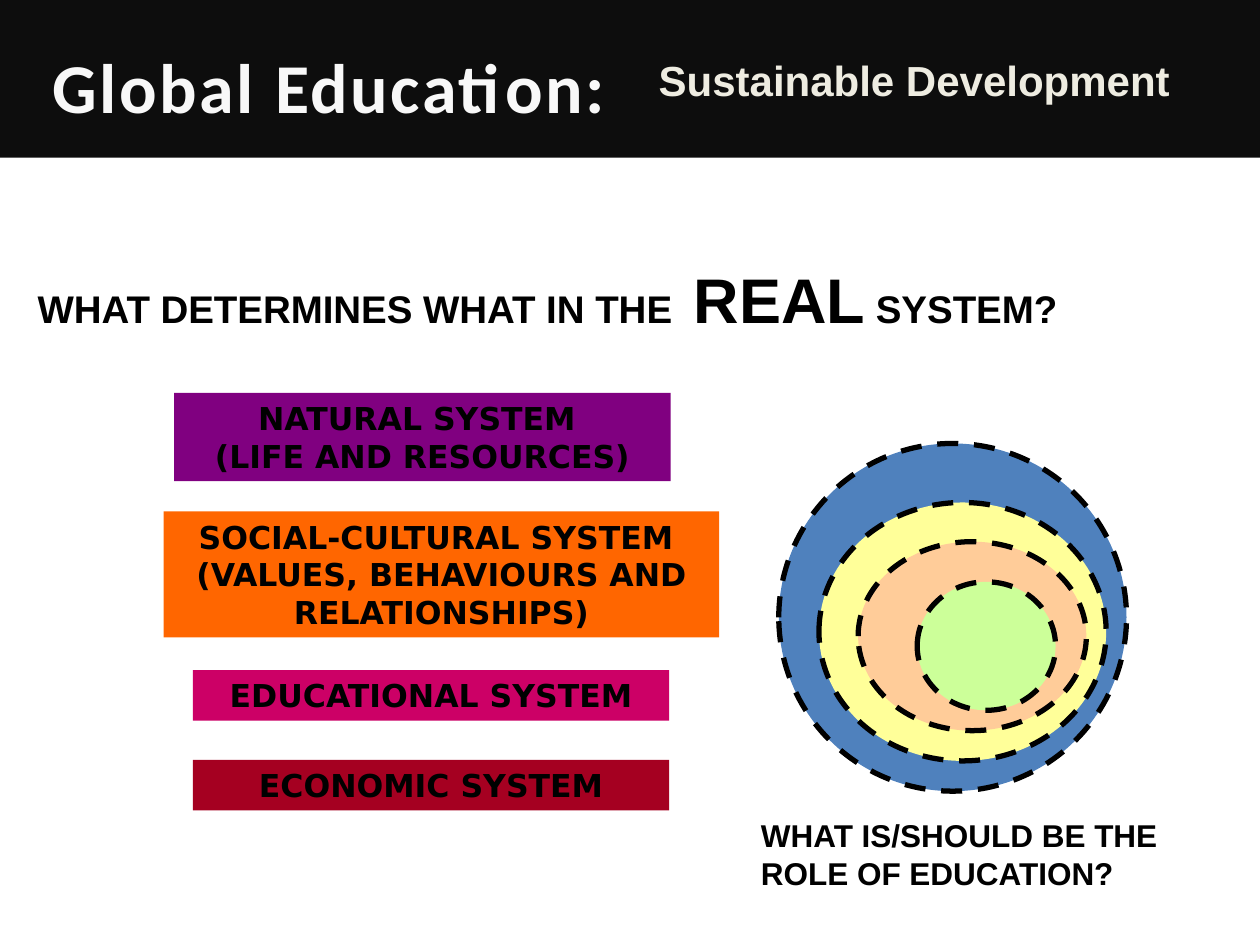
import pptx
import pptx.util
import pptx.dml.color
import pptx.enum.dml
import pptx.enum.shapes
import pptx.enum.text

Cm = pptx.util.Cm
Pt = pptx.util.Pt
RGBColor = pptx.dml.color.RGBColor
MSO_SHAPE = pptx.enum.shapes.MSO_SHAPE
PP_ALIGN = pptx.enum.text.PP_ALIGN
MSO_ANCHOR = pptx.enum.text.MSO_ANCHOR
MSO_AUTO_SIZE = pptx.enum.text.MSO_AUTO_SIZE

BLACK = RGBColor(0x00, 0x00, 0x00)
BAND = RGBColor(0x0D, 0x0D, 0x0D)
OFF_WHITE = RGBColor(0xF8, 0xF8, 0xF8)
CREAM = RGBColor(0xEE, 0xEC, 0xE1)
BLUE = RGBColor(0x4F, 0x81, 0xBD)
YELLOW = RGBColor(0xFF, 0xFF, 0x99)
PEACH = RGBColor(0xFF, 0xCC, 0x99)
GREEN = RGBColor(0xCC, 0xFF, 0x99)
PURPLE = RGBColor(0x80, 0x00, 0x80)
ORANGE = RGBColor(0xFF, 0x66, 0x00)
PINK = RGBColor(0xCC, 0x00, 0x66)
RED = RGBColor(0xA5, 0x00, 0x21)

SYSTEMS = [
    ("NATURAL SYSTEM \v(LIFE AND RESOURCES)", PURPLE, (0.21, 0, 10.01, 1.78)),
    ("SOCIAL-CULTURAL SYSTEM \v(VALUES, BEHAVIOURS AND RELATIONSHIPS)",
     ORANGE, (0, 2.39, 11.2, 2.54)),
    ("EDUCATIONAL SYSTEM", PINK, (0.59, 5.59, 9.6, 1.02)),
    ("ECONOMIC SYSTEM", RED, (0.59, 7.4, 9.6, 1.02)),
]
RINGS = [
    (BLUE, (0, 0, 7.01, 7.01)),
    (YELLOW, (0.81, 1.19, 5.79, 5.21)),
    (PEACH, (1.6, 1.98, 4.6, 3.81)),
    (GREEN, (2.79, 2.79, 2.79, 2.59)),
]


def add_shape(s, kind, x, y, w, h, fill):
    sp = s.shapes.add_shape(kind, Cm(x), Cm(y), Cm(w), Cm(h))
    sp.shadow.inherit = False
    sp.fill.solid()
    sp.fill.fore_color.rgb = fill
    sp.line.fill.background()
    return sp


def set_text(sp, text, size, font="Arial", color=BLACK, align=PP_ALIGN.LEFT):
    tf = sp.text_frame
    tf.text = text
    tf.word_wrap = True
    tf.auto_size = MSO_AUTO_SIZE.SHAPE_TO_FIT_TEXT
    tf.vertical_anchor = MSO_ANCHOR.TOP
    p = tf.paragraphs[0]
    p.alignment = align
    p.font.name = font
    p.font.size = Pt(size)
    p.font.bold = True
    p.font.color.rgb = color
    return p


def add_text(s, x, y, w, h, text, size, **style):
    sp = s.shapes.add_textbox(Cm(x), Cm(y), Cm(w), Cm(h))
    set_text(sp, text, size, **style)
    return sp


def add_header(s, x, y, w, h):
    add_shape(s, MSO_SHAPE.RECTANGLE, x, y, w, h, BAND)
    title = add_text(s, x + 0.58, y, 12.12, 5.03, "Global Education:", 40,
                     font="Calibri", color=OFF_WHITE, align=PP_ALIGN.CENTER)
    tf = title.text_frame
    tf.auto_size = MSO_AUTO_SIZE.NONE
    tf.vertical_anchor = MSO_ANCHOR.MIDDLE
    tf.margin_bottom = Cm(1.7)
    tf.paragraphs[0].runs[0].font._element.set("spc", "150")
    add_text(s, x + 13.03, y + 0.97, 11.4, 1.27, "Sustainable Development", 24,
             color=CREAM)


def add_question(s, x, y, w, h):
    sp = add_text(s, x, y, w, h, "WHAT DETERMINES WHAT IN THE  ", 22)
    p = sp.text_frame.paragraphs[0]
    for text, size in (("REAL", 36), (" SYSTEM?", 22)):
        r = p.add_run()
        r.text = text
        r.font.size = Pt(size)


def add_systems(s, x, y):
    for text, fill, (dx, dy, w, h) in SYSTEMS:
        sp = add_shape(s, MSO_SHAPE.RECTANGLE, x + dx, y + dy, w, h, fill)
        set_text(sp, text, 18, font="DejaVu Sans", align=PP_ALIGN.CENTER)


def add_rings(s, x, y):
    for fill, (dx, dy, w, h) in RINGS:
        sp = add_shape(s, MSO_SHAPE.OVAL, x + dx, y + dy, w, h, fill)
        sp.line.color.rgb = BLACK
        sp.line.width = Pt(3)
        sp.line.dash_style = pptx.enum.dml.MSO_LINE.DASH


def main():
    prs = pptx.Presentation()
    prs.slide_width = Cm(25.4)
    prs.slide_height = Cm(19.05)
    s = prs.slides.add_slide(prs.slide_layouts[6])
    add_header(s, 0, 0, 25.4, 3.18)
    add_rings(s, 15.7, 8.94)
    add_question(s, 0.51, 5.13, 26.01, 1.78)
    add_systems(s, 3.3, 7.92)
    add_text(s, 15.09, 16.33, 9.6, 1.78,
             "WHAT IS/SHOULD BE THE ROLE OF EDUCATION?", 18)
    prs.save("out.pptx")


if __name__ == "__main__":
    main()
